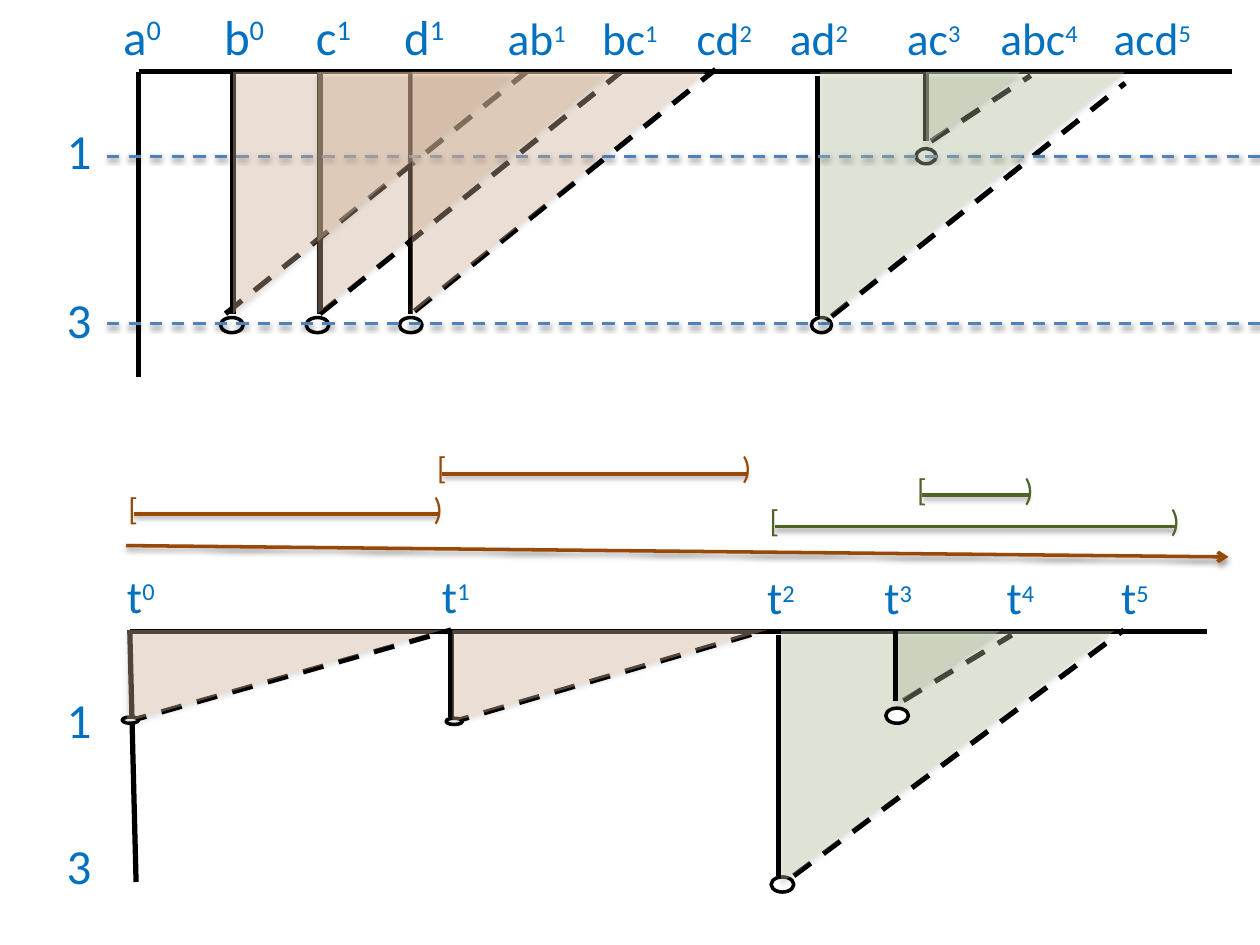
from lxml.etree import SubElement
from pptx import Presentation
from pptx.dml.color import RGBColor
from pptx.enum.dml import MSO_LINE
from pptx.enum.shapes import MSO_CONNECTOR, MSO_SHAPE
from pptx.enum.text import MSO_AUTO_SIZE
from pptx.oxml.ns import qn
from pptx.util import Inches, Pt

BLACK = RGBColor(0x00, 0x00, 0x00)
WHITE = RGBColor(0xFF, 0xFF, 0xFF)
TEXT_BLUE = RGBColor(0x00, 0x70, 0xC0)
LEVEL_BLUE = RGBColor(0x4F, 0x81, 0xBD)
BROWN = RGBColor(0x98, 0x48, 0x07)
OLIVE = RGBColor(0x4F, 0x62, 0x28)
PEACH = RGBColor(0xFC, 0xD5, 0xB5)
GREEN = RGBColor(0xD7, 0xE4, 0xBD)

LINE_SHADOW = (38, 1.6)
AREA_SHADOW = (35, 1.8)

MAIN_LABELS = [("a", "0", 0.88), ("b", "0", 1.68), ("c", "1", 2.41), ("d", "1", 3.11)]
JOINED_LABELS = [
    ("ab", "1", 3.93, 0.9), ("bc", "1", 4.68, 0.67), ("cd", "2", 5.43, 0.67),
    ("ad", "2", 6.17, 1), ("ac", "3", 7.1, 1), ("abc", "4", 7.84, 1.01),
    ("acd", "5", 8.74, 1.01),
]
TIMES = [("0", 0.91, 4.46), ("1", 3.41, 4.46), ("2", 5.99, 4.47),
         ("3", 6.92, 4.47), ("4", 7.89, 4.47), ("5", 8.8, 4.47)]
LEVEL_LABELS = [("1", 0.91), ("3", 2.25), ("1", 5.42), ("3", 6.58)]
LEVELS = [2.57, 1.24]

AXES = [(1.1, 0.57, 9.78, 0.57), (1.1, 0.57, 1.1, 2.99),
        (1.03, 5.01, 9.58, 5.01), (1.03, 5, 1.08, 7)]
STEMS = [(1.85, 0.57, 2.49), (2.54, 0.57, 2.49), (3.26, 0.57, 2.49), (6.49, 0.6, 2.51),
         (7.35, 0.57, 1.12), (6.18, 5.04, 6.95), (3.58, 5, 5.69)]
SLOPES = [(1.79, 2.49, 4.18, 0.57), (2.54, 2.49, 4.93, 0.57), (3.29, 2.47, 5.68, 0.55),
          (6.6, 2.51, 8.93, 0.66), (7.39, 1.12, 8.18, 0.6), (6.3, 6.95, 8.92, 5),
          (7.17, 5.56, 8.03, 5.04), (1, 5.73, 3.58, 5), (3.56, 5.74, 6.08, 5)]
RINGS = [(1.75, 2.52, 0.18, 0.12), (2.43, 2.52, 0.18, 0.12), (3.17, 2.52, 0.18, 0.12),
         (6.44, 2.52, 0.16, 0.12), (7.27, 1.18, 0.16, 0.12), (6.12, 6.96, 0.18, 0.12),
         (0.97, 5.69, 0.13, 0.05), (3.54, 5.7, 0.13, 0.05)]
WEDGES = [
    (1.85, 0.57, 2.25, 1.92, PEACH), (2.52, 0.57, 2.33, 1.92, PEACH),
    (3.27, 0.57, 2.33, 1.92, PEACH), (6.51, 0.57, 2.42, 2, GREEN),
    (7.35, 0.57, 0.75, 0.58, GREEN), (6.2, 5.01, 2.64, 2, GREEN),
    (7.11, 5.01, 0.82, 0.58, GREEN), (1.01, 5, 2.5, 0.73, PEACH),
    (3.59, 5, 2.5, 0.73, PEACH),
]
RANGES = [(1.06, 3.48, 4.08, BROWN), (3.51, 5.93, 3.76, BROWN),
          (6.15, 9.33, 4.18, OLIVE), (7.32, 8.17, 3.93, OLIVE)]


def add_effects(s, shadow=None):
    """Override theme effects, with a downward shadow if one is given."""
    effects = SubElement(s._element.spPr, qn("a:effectLst"))
    if shadow:
        alpha, dist = shadow
        outer = SubElement(effects, qn("a:outerShdw"), blurRad=str(Pt(3.1)), dist=str(Pt(dist)),
                           dir="5400000", rotWithShape="0")
        color = SubElement(outer, qn("a:srgbClr"), val="000000")
        SubElement(color, qn("a:alpha"), val=str(alpha * 1000))


def add_line(shapes, ends, color=BLACK, width=3, dash=False, shadow=None, arrow=False):
    """Draw a straight line between two points."""
    s = shapes.add_connector(MSO_CONNECTOR.STRAIGHT, *map(Inches, ends))
    s.line.color.rgb = color
    s.line.width = Pt(width)
    if dash:
        s.line.dash_style = MSO_LINE.DASH
    if arrow:
        SubElement(s.line._get_or_add_ln(), qn("a:tailEnd"), type="arrow")
    add_effects(s, shadow)


def add_ring(shapes, box):
    """Draw a white ellipse with a black outline."""
    s = shapes.add_shape(MSO_SHAPE.OVAL, *map(Inches, box))
    s.shadow.inherit = False
    s.fill.solid()
    s.fill.fore_color.rgb = WHITE
    s.line.color.rgb = BLACK
    s.line.width = Pt(2)


def add_wedge(shapes, x, y, w, h, color):
    """Draw a translucent right triangle with its right angle at top left."""
    box = (x + (w - h) / 2, y + (h - w) / 2, h, w)
    s = shapes.add_shape(MSO_SHAPE.RIGHT_TRIANGLE, *map(Inches, box))
    s.rotation = 90
    s.fill.solid()
    s.fill.fore_color.rgb = color
    SubElement(s._element.spPr.find(".//" + qn("a:srgbClr")), qn("a:alpha"), val="32000")
    s.line.fill.background()
    add_effects(s, AREA_SHADOW)


def add_label(shapes, box, text, size, sup="", sup_size=None, color=TEXT_BLUE, wrap=True):
    """Write a label with an optional superscript."""
    tf = shapes.add_textbox(*map(Inches, box)).text_frame
    tf.word_wrap = wrap
    tf.auto_size = MSO_AUTO_SIZE.SHAPE_TO_FIT_TEXT
    p = tf.paragraphs[0]
    for part, points in ((text, size), (sup, sup_size or size)):
        if part:
            r = p.add_run()
            r.text = part
            r.font.size = Pt(points)
            r.font.name = "Calibri"
            r.font.color.rgb = color
    if sup:
        r._r.get_or_add_rPr().set("baseline", "30000")


def main():
    """Build the two stacked interval diagrams."""
    prs = Presentation()
    prs.slide_width, prs.slide_height = Inches(10), Inches(7.5)
    shapes = prs.slides.add_slide(prs.slide_layouts[6]).shapes

    for text, y in LEVEL_LABELS:
        add_label(shapes, (0.43, y, 0.43, 0.57), text, 28)
    for text, sup, x in MAIN_LABELS:
        add_label(shapes, (x, 0, 0.63, 0.57), text, 28, sup)
    for text, sup, x, w in JOINED_LABELS:
        add_label(shapes, (x, 0.03, w, 0.54), text, 26, sup, 24)
    for sup, x, y in TIMES:
        add_label(shapes, (x, y, 0.9, 0.54), "t", 26, sup, 24)

    for ends in AXES:
        add_line(shapes, ends)
    for x, top, bottom in STEMS:
        add_line(shapes, (x, top, x, bottom))
    for ends in SLOPES:
        add_line(shapes, ends, dash=True)
    for box in RINGS:
        add_ring(shapes, box)
    for y in LEVELS:
        add_line(shapes, (0.85, y, 10, y), LEVEL_BLUE, 1.75, dash=True, shadow=LINE_SHADOW)
    for wedge in WEDGES:
        add_wedge(shapes, *wedge)
    add_line(shapes, (7.11, 5.01, 7.11, 5.56))
    add_ring(shapes, (7.03, 5.62, 0.18, 0.12))

    add_line(shapes, (1, 4.33, 9.75, 4.42), BROWN, 2, shadow=LINE_SHADOW, arrow=True)
    for start, end, y, color in RANGES:
        add_line(shapes, (start, y, end, y), color, 2, shadow=LINE_SHADOW)
        add_label(shapes, (start - 0.14, y - 0.25, 0.35, 0.4), "[", 18, color=color)
        add_label(shapes, (end - 0.14, y - 0.25, 0.29, 0.4), ")", 18, color=color, wrap=False)

    prs.save("out.pptx")


if __name__ == "__main__":
    main()
